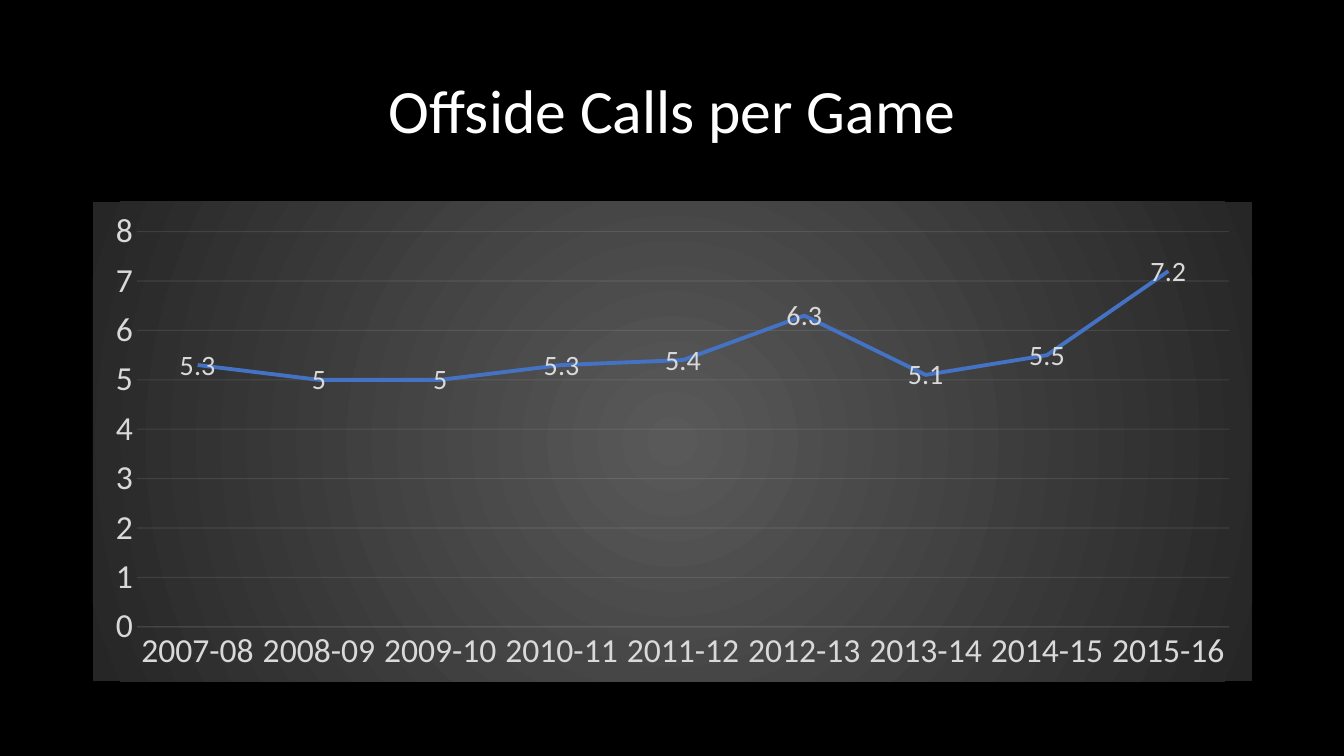
from dataclasses import dataclass

from lxml.etree import SubElement
from pptx import Presentation
from pptx.chart.data import CategoryChartData
from pptx.dml.color import RGBColor as Rgb
from pptx.enum.chart import XL_CHART_TYPE as Kind, XL_LABEL_POSITION as Spot
from pptx.enum.chart import XL_TICK_MARK as Tick
from pptx.enum.text import MSO_ANCHOR as Anchor, PP_ALIGN as Align
from pptx.oxml import parse_xml
from pptx.oxml.ns import nsdecls, qn
from pptx.util import Inches, Pt


@dataclass(frozen=True)
class Theme:
    font: str = "Calibri"
    back: str = "000000"
    white: str = "FFFFFF"
    label: str = "D9D9D9"
    rule: str = "F2F2F2"
    trend: str = "4472C4"
    glow: str = "595959"
    edge: str = "262626"
    title: int = 44
    axis: int = 24
    value: int = 20
    base: int = 10


SEASONS = [f"{year}-{(year + 1) % 100:02d}" for year in range(2007, 2016)]
CALLS = [5.3, 5, 5, 5.3, 5.4, 6.3, 5.1, 5.5, 7.2]


def apply(item, **values):
    for name, value in values.items():
        setattr(item, name, value)


class Deck:
    def __init__(self, theme):
        self.theme = theme
        self.show = Presentation()
        apply(self.show, slide_width=Inches(13.33), slide_height=Inches(7.5))
        self.slide = self.show.slides.add_slide(self.show.slide_layouts[5])
        fill = self.slide.background.fill
        fill.solid()
        fill.fore_color.rgb = Rgb.from_string(theme.back)

    def style(self, font, size, color):
        apply(font, name=self.theme.font, size=Pt(size), bold=False)
        font.color.rgb = Rgb.from_string(color)

    def stroke(self, line, width, color):
        line.width = Pt(width)
        line.color.rgb = Rgb.from_string(color)

    def title(self, text, left, top, width, height):
        shape = self.slide.shapes.title
        apply(shape, left=Inches(left), top=Inches(top),
              width=Inches(width), height=Inches(height))
        frame = shape.text_frame
        apply(frame, text=text, vertical_anchor=Anchor.MIDDLE, word_wrap=True)
        para = frame.paragraphs[0]
        apply(para, alignment=Align.CENTER, line_spacing=0.9)
        self.style(para.runs[0].font, self.theme.title, self.theme.white)

    def chart(self, name, cats, vals, *box):
        theme = self.theme
        data = CategoryChartData()
        data.categories = cats
        data.add_series(name, vals)
        chart = self.slide.shapes.add_chart(
            Kind.LINE, *map(Inches, box), data).chart
        apply(chart, has_legend=False, has_title=False)
        self.style(chart.font, theme.base, theme.white)
        self.axes(chart)

        series = chart.plots[0].series[0]
        series.smooth = False
        self.stroke(series.format.line, 2.75, theme.trend)
        labels = series.data_labels
        apply(labels, show_value=True, position=Spot.CENTER)
        self.style(labels.font, theme.value, theme.label)
        self.shade(chart)

    def axes(self, chart):
        theme = self.theme
        seasons, scale = chart.category_axis, chart.value_axis
        for axis in (seasons, scale):
            apply(axis, major_tick_mark=Tick.NONE, minor_tick_mark=Tick.NONE)
            self.style(axis.tick_labels.font, theme.axis, theme.label)
        apply(scale, minimum_scale=0, maximum_scale=8, major_unit=1,
              has_major_gridlines=True)
        scale.format.line.fill.background()
        for item in (seasons, scale.major_gridlines):
            self.stroke(item.format.line, 0.75, theme.rule)
        for color in chart.element.xpath(f"//a:srgbClr[@val='{theme.rule}']"):
            SubElement(color, qn("a:alpha"), val="10000")

    def shade(self, chart):
        """Fill the chart area with a radial gradient."""
        stops = "".join(
            f'<a:gs pos="{pos}"><a:srgbClr val="{color}"/></a:gs>'
            for pos, color in ((0, self.theme.glow), (100000, self.theme.edge)))
        middle = " ".join(f'{side}="50000"' for side in "ltrb")
        area = parse_xml(
            f'<c:spPr {nsdecls("c", "a")}><a:gradFill><a:gsLst>{stops}</a:gsLst>'
            f'<a:path path="circle"><a:fillToRect {middle}/></a:path>'
            '</a:gradFill><a:ln><a:noFill/></a:ln></c:spPr>')
        chart.element.find(qn("c:chart")).addnext(area)


def main():
    deck = Deck(Theme())
    deck.title("Offside Calls per Game", 0.92, 0.4, 11.5, 1.45)
    deck.chart("Series 1", SEASONS, CALLS, 0.92, 2, 11.5, 4.76)
    deck.show.save("out.pptx")


if __name__ == "__main__":
    main()
